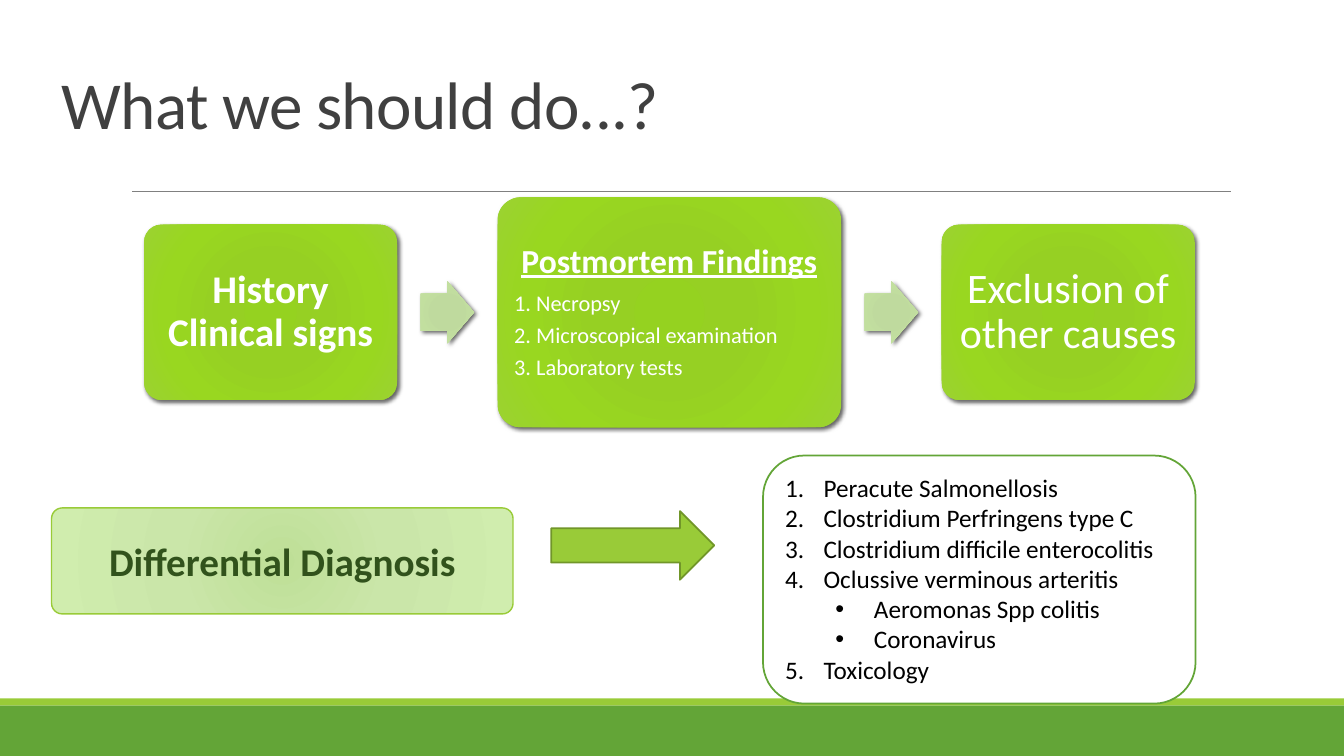
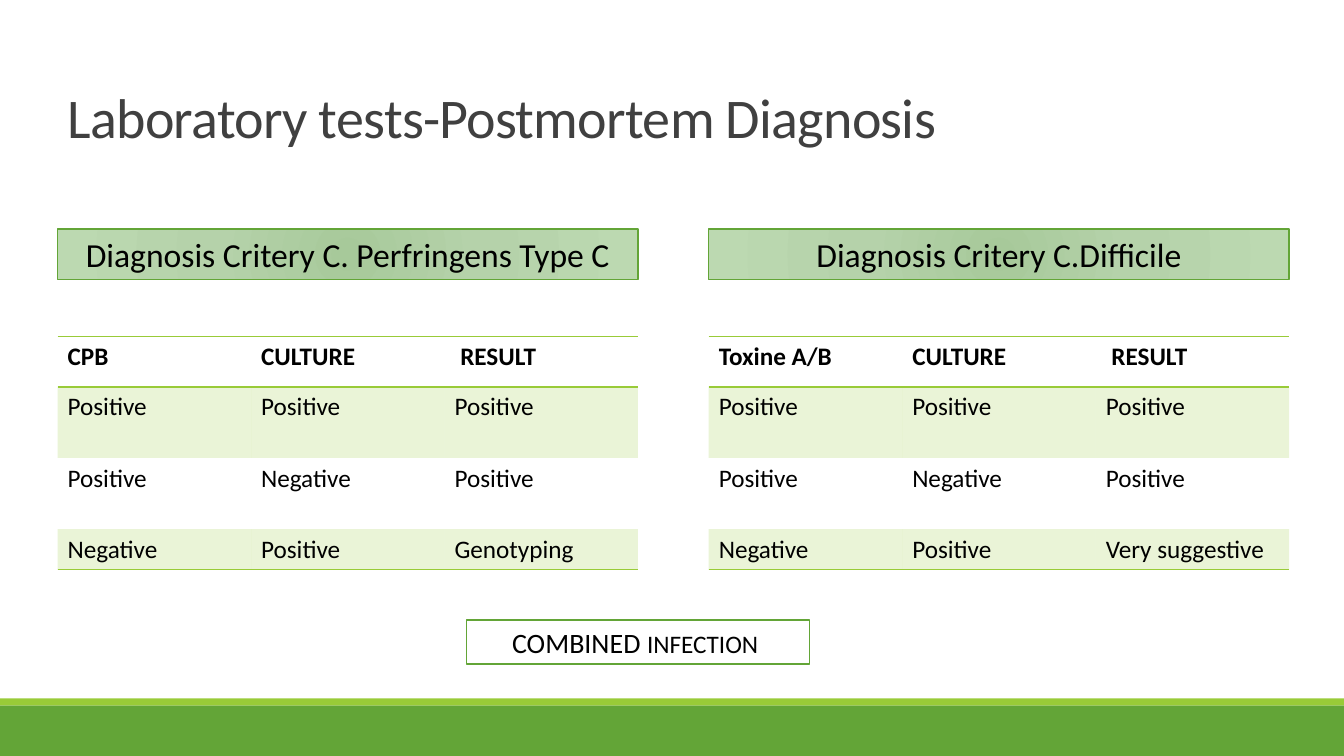
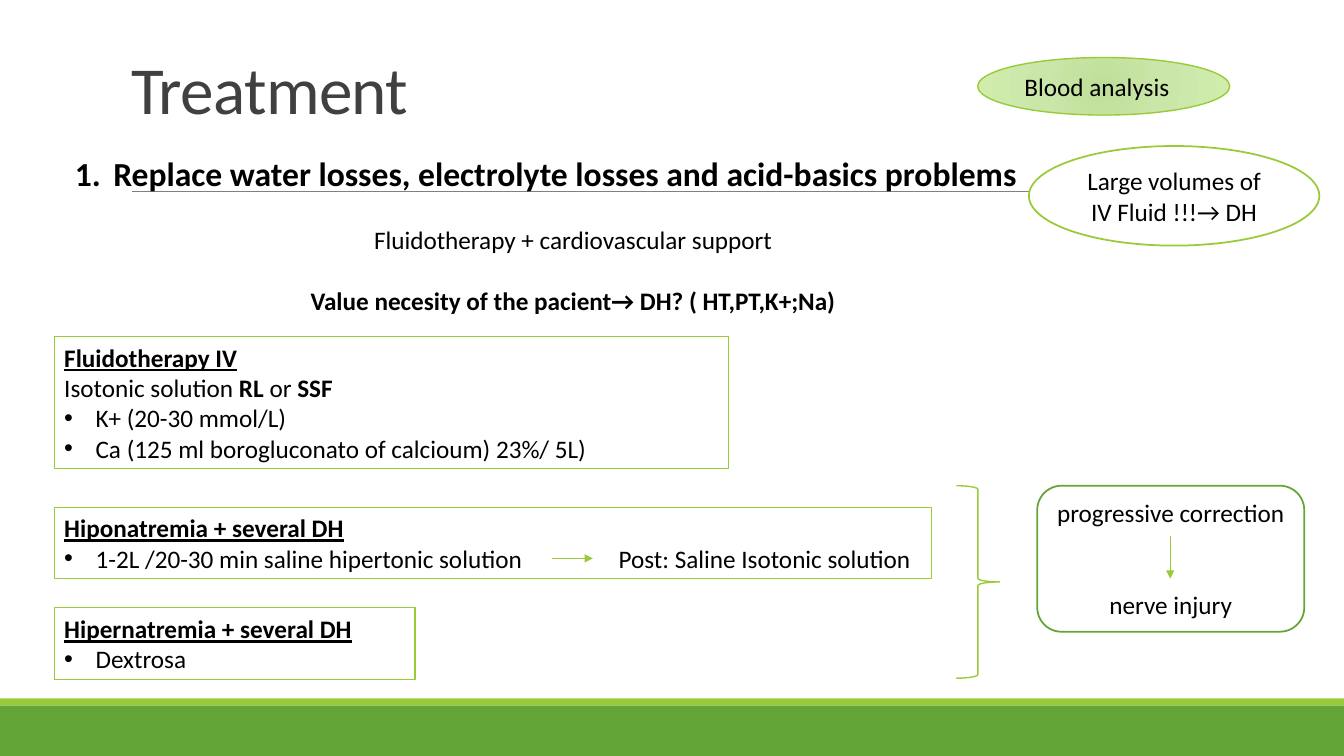
from dataclasses import dataclass

from pptx import Presentation, oxml, util as u
from pptx.dml.color import RGBColor as RGB
from pptx.enum import shapes, text
from pptx.oxml import ns

KIND = shapes.MSO_SHAPE
MID = text.PP_ALIGN.CENTER
LEFT = text.PP_ALIGN.LEFT


@dataclass(frozen=True)
class Theme:
    font: str = "Calibri"
    green: str = "63A537"
    lime: str = "99CB38"
    olive: str = "719629"
    forest: str = "31521C"
    grey: str = "404040"
    rule: str = "808080"
    white: str = "FFFFFF"
    black: str = "000000"
    vivid: tuple = ((0, "95D220"), (34, "96D023"), (70, "99D720"), (100, "9BD231"))
    pale: tuple = ((0, "BDD99C"), (34, "BFDA9E"), (70, "C2DF9F"), (100, "CAE4AC"))
    soft: tuple = ((0, "BEDF97"), (45, "CAE6A9"), (100, "D0EDAE"))
    sage: tuple = ((0, "A7C99A"), (45, "B5D2AA"), (100, "BCD9B1"))
    huge: int = 48
    large: int = 40
    big: int = 30
    lead: int = 28
    head: int = 24
    mid: int = 20
    base: int = 18
    small: int = 16


T = Theme()
WIDE, HIGH = 33.87, 19.05

BANDS = [((0, 17.78, WIDE, 1.27), T.green), ((0, 17.6, WIDE, 0.18), T.lime)]
RULE = (3.33, 4.83, 31.01, 4.83)

TITLES = [
    ("What we should do...?", (1.3, 0.79, 27.94, 2.95), T.huge),
    ("Laboratory tests-Postmortem Diagnosis", (1.45, 0.86, 29.9, 3.05), T.large),
    ("Treatment", (3.05, 0.79, 27.94, 2.57), T.huge),
]

STEP = {"color": T.white, "line_spacing": 0.9}
ITEM = {**STEP, "size": T.small, "space_after": u.Pt(5.6)}
SIDE, CORE = (6.38, 4.42), (8.66, 5.79)
FLOW = [
    (SIDE, 0.3, [{"text": "History Clinical signs", "size": T.lead, "bold": True,
                  "alignment": MID, **STEP}]),
    (CORE, 0.25, [
        {"text": "Postmortem Findings", "size": T.head, "bold": True, "underline": True,
         "alignment": MID, "space_after": u.Pt(8.4), **STEP},
        {"text": "1. Necropsy", **ITEM},
        {"text": "2. Microscopical examination", **ITEM},
        {"text": "3. Laboratory tests", **ITEM}]),
    (SIDE, 0.3, [{"text": "Exclusion of other causes", "size": T.big,
                  "alignment": MID, **STEP}]),
]
START, AXIS, GAP, ARROW = 3.63, 7.87, 0.59, (1.35, 1.57)

CAUSES = [
    ("Peracute Salmonellosis", 0),
    ("Clostridium Perfringens type C", 0),
    ("Clostridium difficile enterocolitis", 0),
    ("Oclussive verminous arteritis", 0),
    ("Aeromonas Spp colitis", 1),
    ("Coronavirus", 1),
    ("Toxicology", 0),
]

TESTS = [
    (1.45, "Diagnosis Critery C. Perfringens Type C", [
        ("CPB", "CULTURE", " RESULT"),
        ("Positive", "Positive", "Positive"),
        ("Positive", "Negative", "Positive"),
        ("Negative", "Positive", "Genotyping")]),
    (17.86, "Diagnosis Critery C.Difficile", [
        ("Toxine A/B", "CULTURE", " RESULT"),
        ("Positive", "Positive", "Positive"),
        ("Positive", "Negative", "Positive"),
        ("Negative", "Positive", "Very suggestive")]),
]
SPAN, ROWS = 14.63, (1.27, 1.79, 1.79, 1.02)

PLAN = [
    {"text": "Replace water losses, electrolyte losses and acid-basics problems",
     "size": T.head, "bold": True, "mark": "1.", "hang": 0.97},
    {"text": "Fluidotherapy + cardiovascular support", "alignment": MID,
     "space_before": u.Pt(22)},
    {"text": "Value necesity of the pacient→ DH? ( HT,PT,K+;Na)", "bold": True,
     "alignment": MID, "space_before": u.Pt(22)},
]
TOP = {"bold": True, "underline": True}
DOT = {"mark": "•", "hang": 0.79}
BOLD = {"bold": True}
CARE = [
    ((1.37, 8.48, 16.99, 3.33), [
        {"text": "Fluidotherapy IV", **TOP},
        {"text": [("Isotonic solution ", {}), ("RL ", BOLD), ("or", {}), (" SSF", BOLD)]},
        {"text": "K+ (20-30 mmol/L)", **DOT},
        {"text": "Ca (125 ml borogluconato of calcioum) 23%/ 5L)", **DOT}]),
    ((1.37, 12.78, 22.1, 1.8), [
        {"text": "Hiponatremia + several DH", **TOP},
        {"text": "1-2L /20-30 min saline hipertonic solution", **DOT}]),
    ((1.37, 15.32, 9.09, 1.8), [
        {"text": "Hipernatremia + several DH", **TOP},
        {"text": "Dextrosa", **DOT}]),
]
NOTES = [
    (KIND.OVAL, (25.93, 3.68, 7.32, 2.51), T.white, T.lime, 1.25,
     [{"text": "Large volumes of IV Fluid !!!→ DH", "alignment": MID}]),
    (KIND.OVAL, (24.64, 1.45, 6.35, 1.45), T.soft, T.lime, 1,
     [{"text": "Blood analysis"}]),
    (KIND.ROUNDED_RECTANGLE, (26.14, 12.24, 6.73, 3.68), T.white, T.green, 1.25,
     [{"text": "progressive correction", "alignment": MID},
      {"text": "nerve injury", "alignment": MID, "space_before": u.Pt(44)}]),
]
LINKS = [(13.92, 14.07, 14.94, 14.07), (29.49, 13.51, 29.49, 14.58)]

PARA = ("alignment", "line_spacing", "space_before", "space_after", "level")
FONT = ("name", "size", "bold", "underline")
PLAIN = {"name": T.font, "size": T.base, "bold": False, "underline": False,
         "color": T.black, "alignment": LEFT, "line_spacing": 1.0,
         "space_before": u.Pt(0), "space_after": u.Pt(0)}


def cm(vals):
    return [u.Cm(v) for v in vals]


def put(obj, vals):
    for key, val in vals.items():
        setattr(obj, key, val)


def node(tag, inner="", **attrs):
    pairs = " ".join(f'{k}="{v}"' for k, v in attrs.items())
    return oxml.parse_xml(f"<a:{tag} {ns.nsdecls('a')} {pairs}>{inner}</a:{tag}>")


def mark(par, row):
    props = par._p.get_or_add_pPr()
    hang = u.Cm(row.get("hang", 0))
    props.set("marL", str(u.Cm(row.get("left", row.get("hang", 0)))))
    props.set("indent", str(-hang))
    sign = row.get("mark")
    if sign == "1.":
        props.append(node("buFont", typeface="+mj-lt"))
        props.append(node("buAutoNum", type="arabicPeriod"))
    elif sign:
        props.append(node("buFont", typeface="Arial"))
        props.append(node("buChar", char=sign))
    else:
        props.append(node("buNone"))


def write(frame, rows, **opts):
    put(frame, {"word_wrap": True, "auto_size": text.MSO_AUTO_SIZE.NONE, **opts})
    for num, row in enumerate(rows):
        par = frame.add_paragraph() if num else frame.paragraphs[0]
        row = {**PLAIN, **row}
        mark(par, row)
        put(par, {k: row[k] for k in PARA if k in row})
        runs = row["text"]
        for words, extra in [(runs, {})] if isinstance(runs, str) else runs:
            look = {**row, **extra}
            run = par.add_run()
            run.text = words
            put(run.font, {k: u.Pt(look[k]) if k == "size" else look[k] for k in FONT})
            run.font.color.rgb = RGB.from_string(look["color"])
            if "spc" in look:
                run._r.get_or_add_rPr().set("spc", str(look["spc"]))


def paint(shape, fill):
    if isinstance(fill, str):
        shape.fill.solid()
        shape.fill.fore_color.rgb = RGB.from_string(fill)
        return
    shape.fill.background()
    if fill:
        stops = "".join(f'<a:gs pos="{p * 1000}"><a:srgbClr val="{c}"/></a:gs>'
                        for p, c in fill)
        edge = " ".join(f'{k}="100000"' for k in "ltrb")
        grad = node("gradFill", f"<a:gsLst>{stops}</a:gsLst>"
                    f'<a:path path="circle"><a:fillToRect {edge}/></a:path>',
                    rotWithShape=1)
        props = shape._element.spPr
        props.replace(props.find(ns.qn("a:noFill")), grad)


def draw(slide, kind, at, fill=None, line=None, width=1, adj=(), shade=False):
    shape = slide.shapes.add_shape(kind, *cm(at))
    for num, val in enumerate(adj):
        shape.adjustments[num] = val
    shape.shadow.inherit = False
    paint(shape, fill)
    if line:
        shape.line.color.rgb = RGB.from_string(line)
        shape.line.width = u.Pt(width)
    else:
        shape.line.fill.background()
    if shade:
        glow = '<a:srgbClr val="000000"><a:alpha val="60000"/></a:srgbClr>'
        shape._element.spPr.find(ns.qn("a:effectLst")).append(
            node("outerShdw", glow, blurRad=38100, dist=25400, dir=2700000,
                 algn="ctr", rotWithShape=0))
    return shape


def link(slide, ends, color, width, head=False):
    line = slide.shapes.add_connector(shapes.MSO_CONNECTOR.STRAIGHT, *cm(ends))
    line.line.color.rgb = RGB.from_string(color)
    line.line.width = u.Pt(width)
    if head:
        line.line._get_or_add_ln().append(node("tailEnd", type="triangle"))
    line._element.spPr.append(node("effectLst"))
    return line


def back(shape, home):
    home.shapes.element.insert(2, shape._element)


def place(shape, at):
    put(shape, dict(zip(("left", "top", "width", "height"), cm(at))))


def title(slide, words, at, size):
    place(slide.shapes.title, at)
    row = {"text": words, "size": size, "color": T.grey, "line_spacing": 0.85, "spc": -50}
    write(slide.shapes.title.text_frame, [row], vertical_anchor=text.MSO_ANCHOR.BOTTOM)


def body(slide, at, rows):
    hold = slide.placeholders[1]
    place(hold, at)
    write(hold.text_frame, rows, vertical_anchor=text.MSO_ANCHOR.TOP)


def share(prs, slide):
    for at, color in BANDS:
        back(draw(slide, KIND.RECTANGLE, at, color), prs.slide_master)
    back(link(slide, RULE, T.rule, 0.5), slide.slide_layout)


def steps(slide):
    left = START
    for num, (size, pad, rows) in enumerate(FLOW):
        if num:
            draw(slide, KIND.RIGHT_ARROW, (left, AXIS - ARROW[1] / 2, *ARROW), T.pale,
                 adj=(0.6, 0.5), shade=True)
            left += ARROW[0] + GAP
        box = draw(slide, KIND.ROUNDED_RECTANGLE, (left, AXIS - size[1] / 2, *size),
                   T.vivid, adj=(0.1,), shade=True)
        sides = ("margin_left", "margin_top", "margin_right", "margin_bottom")
        write(box.text_frame, rows, **dict.fromkeys(sides, u.Cm(pad)))
        left += size[0] + GAP
    box = draw(slide, KIND.ROUNDED_RECTANGLE, (1.3, 12.8, 11.63, 2.67), T.soft, T.lime,
               adj=(0.1,))
    write(box.text_frame, [{"text": "Differential Diagnosis", "size": T.lead, "bold": True,
                            "color": T.forest, "alignment": MID}])
    draw(slide, KIND.RIGHT_ARROW, (13.89, 12.88, 4.11, 1.73), T.lime, T.olive, 1.25)
    back(draw(slide, KIND.ROUNDED_RECTANGLE, (19.23, 11.48, 10.9, 6.25), T.white,
              T.green, 1.25), slide)
    looks = ({"mark": "1.", "hang": 0.97},
             {"mark": "•", "hang": 0.97, "left": 2.24, "level": 1})
    body(slide, (19.53, 11.78, 10.3, 5.65),
         [{"text": words, **looks[rank]} for words, rank in CAUSES])


def grid(slide, left, data):
    frame = slide.shapes.add_table(len(data), len(data[0]),
                                   *cm((left, 8.48, SPAN, sum(ROWS))))
    table = frame.table
    put(table, {"first_row": False, "horz_banding": False})
    style = table._tbl.tblPr.find(ns.qn("a:tableStyleId"))
    style.text = "{2D5ABB26-0587-4C30-8999-92F81FD0307C}"
    for col in table.columns:
        col.width = u.Cm(SPAN / len(data[0]))
    ink = f'<a:solidFill><a:srgbClr val="{T.lime}"/></a:solidFill>'
    for y, row in enumerate(data):
        table.rows[y].height = u.Cm(ROWS[y])
        edges = {0: ("lnB", "lnT"), len(data) - 1: ("lnB",)}.get(y, ())
        for x, words in enumerate(row):
            cell = table.cell(y, x)
            write(cell.text_frame, [{"text": words, "bold": y == 0}])
            props = cell._tc.get_or_add_tcPr()
            if y % 2:
                cell.fill.solid()
                cell.fill.fore_color.rgb = RGB.from_string(T.lime)
                for tint in props.iter(ns.qn("a:srgbClr")):
                    tint.append(node("alpha", val=20000))
            else:
                cell.fill.background()
            for edge in edges:
                props.insert(0, node(edge, ink, w=12700))


def labs(slide):
    for left, words, data in TESTS:
        box = draw(slide, KIND.RECTANGLE, (left, 5.77, SPAN, 1.27), T.sage, T.green)
        write(box.text_frame, [{"text": words, "size": T.head, "alignment": MID}])
        grid(slide, left, data)
    box = draw(slide, KIND.RECTANGLE, (11.76, 15.62, 8.64, 1.12), T.white, T.green, 1.25)
    runs = [("COMBINED ", {"size": T.mid}), ("INFECTION ", {})]
    write(box.text_frame, [{"text": runs, "alignment": MID}])


def care(slide):
    body(slide, (1.63, 3.73, 25.63, 4.37), PLAN)
    for kind, at, fill, line, width, rows in NOTES:
        write(draw(slide, kind, at, fill, line, width).text_frame, rows)
    for at, rows in CARE:
        write(draw(slide, KIND.RECTANGLE, at, None, T.lime, 0.75).text_frame, rows)
    after = slide.shapes.add_textbox(*cm((15.34, 13.57, 7.9, 1.03)))
    write(after.text_frame, [{"text": "Post: Saline Isotonic solution"}])
    draw(slide, KIND.RIGHT_BRACE, (24.1, 12.24, 1.09, 4.85), None, T.lime)
    for ends in LINKS:
        link(slide, ends, T.lime, 1, head=True)


def main():
    prs = Presentation()
    prs.slide_width, prs.slide_height = cm((WIDE, HIGH))
    full, bare = prs.slide_layouts[1], prs.slide_layouts[5]
    pages = zip((full, bare, full), TITLES, (steps, labs, care))
    for num, (layout, head, build) in enumerate(pages):
        slide = prs.slides.add_slide(layout)
        if num == 0:
            share(prs, slide)
        title(slide, *head)
        build(slide)
    prs.save("out.pptx")


if __name__ == "__main__":
    main()
